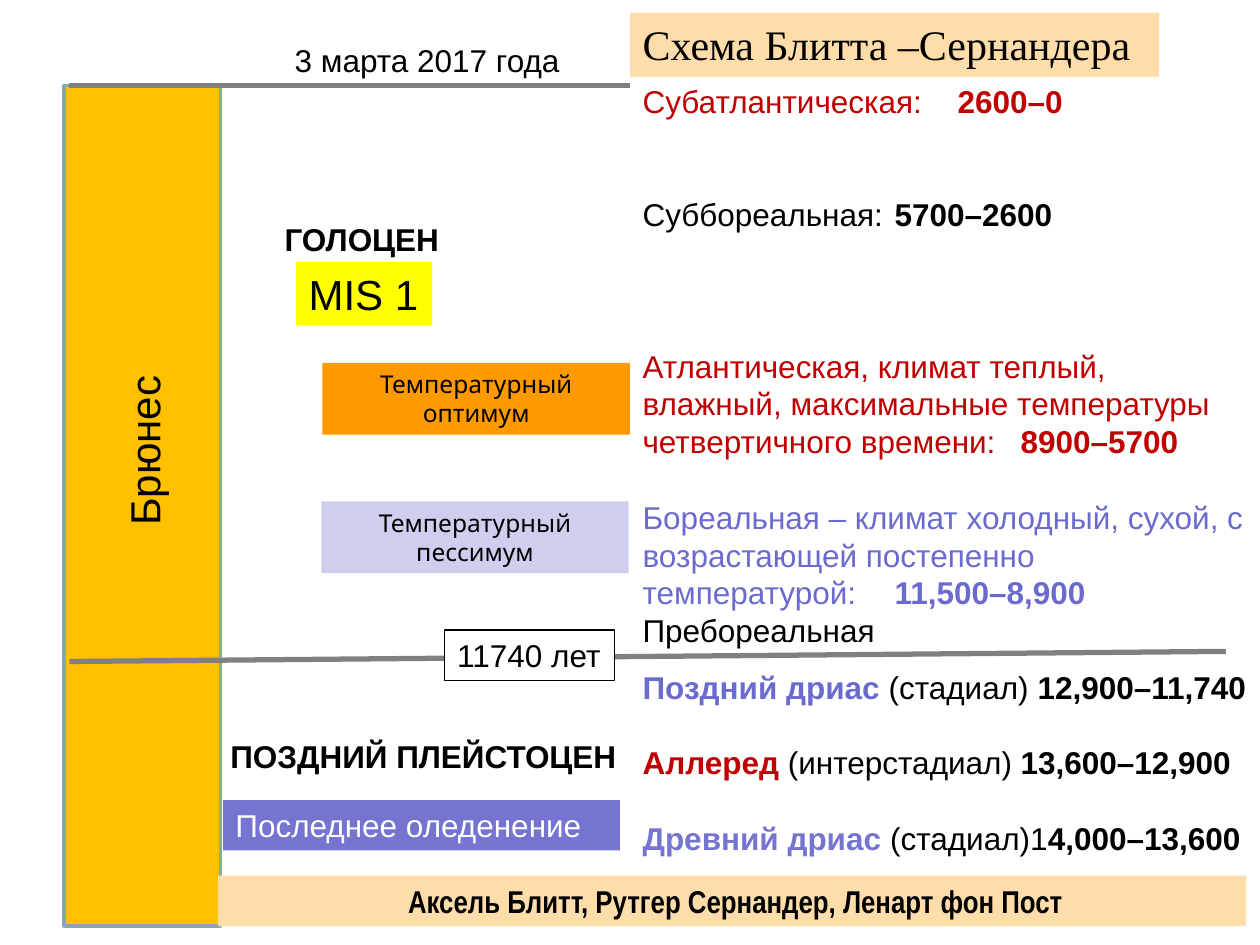
from lxml import etree
from pptx import Presentation
from pptx import util as u
from pptx.dml.color import RGBColor
from pptx.enum import shapes, text
from pptx.oxml.ns import qn

BLACK = RGBColor(0x00, 0x00, 0x00)
WHITE = RGBColor(0xFF, 0xFF, 0xFF)
GRAY = RGBColor(0x80, 0x80, 0x80)
AMBER = RGBColor(0xFF, 0xC0, 0x00)
STEEL = RGBColor(0x8A, 0xA6, 0xA8)
YELLOW = RGBColor(0xFF, 0xFF, 0x00)
ORANGE = RGBColor(0xFF, 0x99, 0x00)
PEACH = RGBColor(0xFF, 0xDD, 0xAB)
LAVENDER = RGBColor(0xCE, 0xCE, 0xEF)
VIOLET = RGBColor(0x75, 0x75, 0xD1)
COLD = RGBColor(0x6B, 0x6B, 0xCF)
WARM = RGBColor(0xC0, 0x00, 0x00)

deck = Presentation()
deck.slide_width, deck.slide_height = u.Inches(10), u.Inches(7.5)
COLUMN = deck.slide_width / 100
ROW = deck.slide_height / 75
LINE = 21.6  # line pitch of the period lists, in points
page = deck.slides.add_slide(deck.slide_layouts[3])


def place(box, left, top, width, height):
    """Put a box on the grid of 100 columns and 75 rows."""
    box.left, box.top = round(left * COLUMN), round(top * ROW)
    box.width, box.height = round(width * COLUMN), round(height * ROW)


def add_text(para, words, font="Arial", size=18, color=BLACK, bold=False):
    span = para.add_run()
    span.text = words
    span.font.name, span.font.size = font, u.Pt(size)
    span.font.color.rgb, span.font.bold = color, bold


# Palaeomagnetic epoch bar
bar = page.shapes.add_shape(shapes.MSO_SHAPE.RECTANGLE, 0, 0, 0, 0)
place(bar, 5.1, 6.8, 12.4, 66.7)
bar.shadow.inherit = False
bar.fill.solid()
bar.fill.fore_color.rgb = AMBER
bar.line.color.rgb, bar.line.width = STEEL, u.Pt(2)

# Boundaries: today and the start of the Holocene
for left, top, right, bottom in [(5.5, 6.8, 50, 6.8), (5.5, 52.5, 97.3, 51.7)]:
    boundary = page.shapes.add_connector(
        shapes.MSO_CONNECTOR.STRAIGHT, round(left * COLUMN), round(top * ROW),
        round(right * COLUMN), round(bottom * ROW))
    boundary.line.color.rgb, boundary.line.width = GRAY, u.Pt(3)
    etree.SubElement(boundary._element.spPr, qn("a:effectLst"))

# Title
title = page.shapes.title
place(title, 50, 1, 42, 5.1)
title.fill.solid()
title.fill.fore_color.rgb = PEACH
frame = title.text_frame
frame.auto_size, frame.word_wrap = text.MSO_AUTO_SIZE.NONE, True
frame.vertical_anchor = text.MSO_ANCHOR.TOP
frame.paragraphs[0].alignment = text.PP_ALIGN.LEFT
add_text(frame.paragraphs[0], "Схема Блитта –Сернандера", font="Times New Roman", size=24)

# Period lists: (lines left free above, spans of words, colour, bold)
holocene = [
    (0, [("Субатлантическая:\t", WARM, False), ("2600–0", WARM, True)]),
    (2, [("Суббореальная:\t", BLACK, False), ("5700–2600", BLACK, True)]),
    (3, [("Атлантическая, климат теплый, влажный, максимальные температуры "
          "четвертичного времени:\t", WARM, False), ("8900–5700", WARM, True)]),
    (1, [("Бореальная – климат холодный, сухой, с возрастающей постепенно "
          "температурой:\t", COLD, False), ("11,500–8,900", COLD, True)]),
    (0, [("Пребореальная", BLACK, False)]),
]
pleistocene = [
    (0, [("Поздний дриас ", COLD, True), ("(стадиал) ", BLACK, False),
         ("12,900–11,740", BLACK, True)]),
    (1, [("Аллеред", WARM, True), (" (интерстадиал)\t", BLACK, False),
         ("13,600–12,900", BLACK, True)]),
    (1, [("Древний дриас ", VIOLET, True), ("(стадиал)1", BLACK, False),
         ("4,000–13,600", BLACK, True)]),
]
for number, top, height, periods in [(1, 6, 49.5, holocene), (2, 52.5, 19.2, pleistocene)]:
    body = page.placeholders[number]
    place(body, 50, top, 50, height)
    frame = body.text_frame
    frame.auto_size, frame.word_wrap = text.MSO_AUTO_SIZE.NONE, True
    for index, (gap, spans) in enumerate(periods):
        para = frame.paragraphs[0] if index == 0 else frame.add_paragraph()
        para.line_spacing, para.space_before = u.Pt(LINE), u.Pt(gap * LINE)
        # No bullet or indent; the dates stand on a right tab
        props = para._p.get_or_add_pPr()
        props.set("marL", "0")
        props.set("indent", "0")
        etree.SubElement(props, qn("a:buNone"))
        tabs = etree.SubElement(props, qn("a:tabLst"))
        etree.SubElement(tabs, qn("a:tab"), pos=str(round(47.5 * COLUMN)), algn="r")
        for words, color, bold in spans:
            add_text(para, words, color=color, bold=bold)

# Labels: words, place, fill, wrap, centred, format
comic = {"font": "Comic Neue", "size": 14}
labels = [
    ("ГОЛОЦЕН", (21.6, 17, 18.2, 4), None, True, False, {"bold": True}),
    ("11740 лет", (35.3, 50, 13.5, 4), WHITE, False, False, {}),
    ("MIS 1", (23.5, 20.8, 10.8, 5), YELLOW, False, False, {"size": 24}),
    ("Брюнес", (1.8, 30.5, 19.3, 5.1), None, True, False, {"size": 24}),
    ("3 марта 2017 года", (22.4, 2.8, 23.2, 4), None, False, False, {}),
    ("Последнее оледенение", (17.7, 63.5, 31.5, 4), VIOLET, True, False, {"color": WHITE}),
    ("Температурный оптимум", (25.6, 28.8, 24.4, 5.7), ORANGE, True, True, comic),
    ("Температурный пессимум", (25.5, 39.8, 24.4, 5.7), LAVENDER, True, True, comic),
    ("ПОЗДНИЙ ПЛЕЙСТОЦЕН", (17.3, 58, 32.7, 4), None, False, False, {"bold": True}),
    (" Аксель Блитт, Рутгер Сернандер, Ленарт фон Пост", (17.3, 69.5, 81.6, 4), PEACH,
     True, True, {"font": "Arial Narrow", "bold": True}),
]
for words, area, fill, wrap, centred, style in labels:
    box = page.shapes.add_textbox(0, 0, 0, 0)
    place(box, *area)
    if fill is not None:
        box.fill.solid()
        box.fill.fore_color.rgb = fill
    if fill == WHITE:
        box.line.color.rgb, box.line.width = BLACK, u.Pt(0.75)
    if words == "Брюнес":
        box.rotation = 270
    box.text_frame.word_wrap = wrap
    para = box.text_frame.paragraphs[0]
    para.alignment = text.PP_ALIGN.CENTER if centred else text.PP_ALIGN.LEFT
    add_text(para, words, **style)

deck.save("out.pptx")
